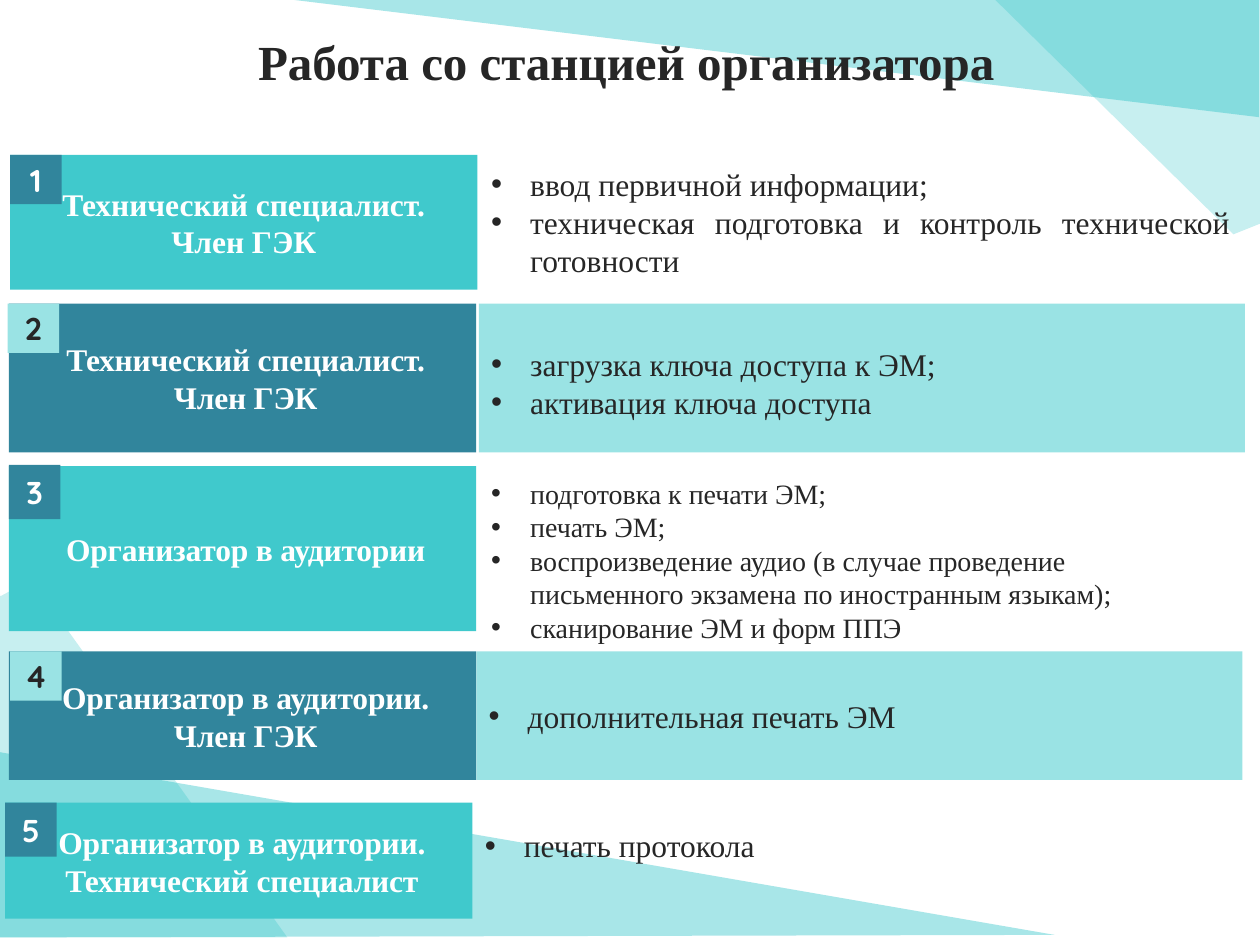
"""Build the slide about working with the organiser station."""
from lxml import etree
from pptx import Presentation
from pptx.dml.color import RGBColor
from pptx.enum.shapes import MSO_SHAPE
from pptx.enum.text import MSO_ANCHOR, PP_ALIGN
from pptx.oxml.ns import qn
from pptx.util import Inches, Pt

WHITE = RGBColor(0xFF, 0xFF, 0xFF)
DARK = RGBColor(0x26, 0x26, 0x26)
ACCENT = RGBColor(0x20, 0xC0, 0xC4)
TURQUOISE = RGBColor(0x40, 0xC9, 0xCC)
PALE = RGBColor(0x9A, 0xE3, 0xE4)
BLUE = RGBColor(0x31, 0x85, 0x9C)


def add_block(shapes, place, color):
    block = shapes.add_shape(MSO_SHAPE.RECTANGLE, *[Inches(value) for value in place])
    block.shadow.inherit = False
    block.fill.solid()
    block.fill.fore_color.rgb = color
    block.line.fill.background()
    return block


def write(box, lines, size=18, color=DARK, font="Times New Roman", bold=False,
          align=PP_ALIGN.LEFT, anchor=MSO_ANCHOR.MIDDLE, bullet=False,
          indent=0, spacing=0):
    frame = box.text_frame
    frame.word_wrap = True
    frame.vertical_anchor = anchor
    for index, line in enumerate(lines):
        para = frame.add_paragraph() if index else frame.paragraphs[0]
        para.alignment = align
        properties = para._p.get_or_add_pPr()
        if indent:
            properties.set("marL", str(Inches(indent)))
            properties.set("indent", str(-Inches(indent) if bullet else 0))
        if bullet:
            etree.SubElement(properties, qn("a:buFont")).set("typeface", "Arial")
            etree.SubElement(properties, qn("a:buChar")).set("char", "•")
        span = para.add_run()
        span.text = line
        span.font.size = Pt(size)
        span.font.name = font
        span.font.bold = bold
        span.font.color.rgb = color
        if spacing:
            span.font._element.set("spc", str(spacing))


deck = Presentation()
deck.slide_width, deck.slide_height = Inches(10), Inches(7.5)
page = deck.slides.add_slide(deck.slide_layouts[5])
shapes = page.shapes

decorations = [
    (39, [(2.17, -0.02), (9.99, 0.93), (9.99, -0.03)]),
    (25, [(10.04, 1.76), (9.79, 1.86), (7.9, 0), (10.03, 0), (10.03, 1.78)]),
    (39, [(8.37, 7.42), (0, 5.97), (0, 7.44)]),
    (25, [(-0.01, 4.74), (0.25, 4.6), (2.28, 7.44), (0, 7.44), (0, 4.72)]),
]
for opacity, points in decorations:
    corners = [(Inches(x), Inches(y)) for x, y in points]
    builder = shapes.build_freeform(*corners[0])
    builder.add_line_segments(corners[1:], close=True)
    facet = builder.convert_to_shape()
    facet.shadow.inherit = False
    facet.fill.solid()
    facet.fill.fore_color.rgb = ACCENT
    facet.line.fill.background()
    tint = facet._element.spPr.find(qn("a:solidFill"))[0]
    etree.SubElement(tint, qn("a:alpha")).set("val", str(opacity * 1000))

title = shapes.title
title.left, title.top = Inches(0.07), Inches(0.13)
title.width, title.height = Inches(9.8), Inches(0.71)
write(title, ["Работа со станцией организатора"], size=28, bold=True,
      align=PP_ALIGN.CENTER)
shapes._spTree.append(title._element)

rows = [
    dict(left=0.08, top=1.23, height=1.07, badge=(0.08, 1.23, 0.41, 0.39),
         role=["Технический специалист.", "Член ГЭК"], indent=0,
         note=(3.8, 1.26, 6.06, 1.01), align=PP_ALIGN.JUSTIFY,
         tasks=["ввод первичной информации;",
                "техническая подготовка и контроль технической готовности"]),
    dict(left=0.07, top=2.41, height=1.18, badge=(0.06, 2.41, 0.41, 0.39),
         role=["Технический специалист.", "Член ГЭК"],
         panel=(3.8, 2.41, 6.08, 1.18), note=(3.8, 2.69, 5.96, 0.71),
         tasks=["загрузка ключа доступа к ЭМ;", "активация ключа доступа"]),
    dict(left=0.07, top=3.7, height=1.31, badge=(0.07, 3.69, 0.41, 0.43),
         role=["Организатор в аудитории"],
         note=(3.8, 3.73, 5.87, 1.45), size=16, margin=0.5,
         tasks=["подготовка к печати ЭМ;", "печать ЭМ;",
                "воспроизведение аудио (в случае проведение письменного "
                "экзамена по иностранным языкам);",
                "сканирование ЭМ и форм ППЭ"]),
    dict(left=0.07, top=5.17, height=1.02, badge=(0.08, 5.17, 0.41, 0.39),
         role=["Организатор в аудитории.", "Член ГЭК"],
         panel=(3.78, 5.17, 6.08, 1.02), tasks=["дополнительная печать ЭМ"]),
    dict(left=0.04, top=6.37, height=0.92, badge=(0.04, 6.37, 0.41, 0.43),
         role=["Организатор в аудитории.", "Технический специалист"],
         note=(3.75, 6.51, 5.87, 0.4), tasks=["печать протокола"]),
]
for number, row in enumerate(rows, start=1):
    odd = number % 2 == 1
    anchor = MSO_ANCHOR.MIDDLE
    if "panel" in row:
        target = add_block(shapes, row["panel"], PALE)
    if "note" in row:
        target = shapes.add_textbox(*[Inches(value) for value in row["note"]])
        anchor = MSO_ANCHOR.TOP
    target.text_frame.margin_right = Inches(row.get("margin", 0.1))
    write(target, row["tasks"], size=row.get("size", 18), bullet=True, indent=0.31,
          align=row.get("align", PP_ALIGN.LEFT), anchor=anchor)

    indent = row.get("indent", 0.05)
    role = add_block(shapes, (row["left"], row["top"], 3.71, row["height"]),
                     TURQUOISE if odd else BLUE)
    write(role, row["role"], color=WHITE, bold=True, align=PP_ALIGN.CENTER,
          indent=indent, spacing=-10 if indent else 0)

    badge = add_block(shapes, row["badge"], BLUE if odd else PALE)
    write(badge, [str(number)], color=WHITE if odd else DARK, font="Quicksand",
          bold=True, align=PP_ALIGN.CENTER)

deck.save("out.pptx")
